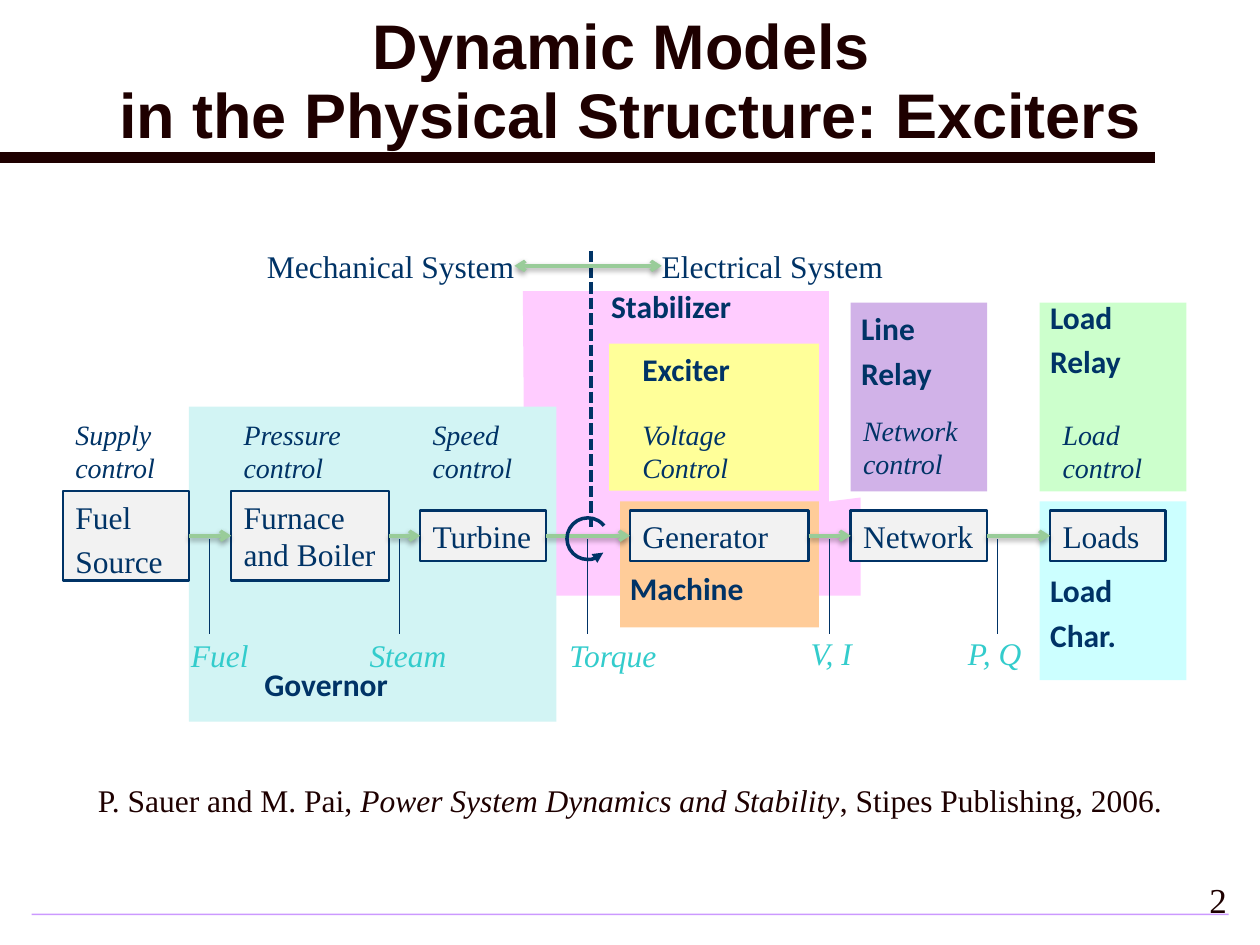
from dataclasses import dataclass
from lxml.etree import SubElement
from pptx import Presentation
from pptx.dml.color import RGBColor
from pptx.enum.dml import MSO_LINE
from pptx.enum.shapes import MSO_CONNECTOR, MSO_SHAPE
from pptx.enum.text import MSO_ANCHOR, PP_ALIGN
from pptx.oxml.ns import qn
from pptx.util import Cm, Pt


@dataclass(frozen=True)
class Theme:
    ink: str = "1E0000"
    navy: str = "003366"
    teal: str = "33CCCC"
    green: str = "99CC99"
    lilac: str = "CC99FF"
    box: str = "F2F2F2"
    serif: str = "Times New Roman"
    title: int = 36
    number: int = 20
    body: int = 18
    small: int = 16

    def font(self, name=None, size=None, bold=False, italic=False):
        return {"name": name or self.serif, "size": Pt(size or self.body),
                "bold": bold, "italic": italic}


class Painter:
    """Holds the theme and the slide being drawn."""

    def __init__(self, slide, theme):
        self.s, self.t = slide, theme

    def label(self, sp, lines, font, color, align=PP_ALIGN.LEFT, inset=0.25):
        """Each line is a string or a list of (text, italic) runs."""
        tf = sp.text_frame
        frame = {"word_wrap": True, "vertical_anchor": MSO_ANCHOR.TOP,
                 "margin_left": Cm(inset), "margin_right": Cm(inset),
                 "margin_top": Cm(0.13), "margin_bottom": Cm(0.13)}
        for key, value in frame.items():
            setattr(tf, key, value)
        for i, line in enumerate(lines):
            p = tf.add_paragraph() if i else tf.paragraphs[0]
            p.alignment = align
            p.space_before = Pt(4 if i else 0)
            runs = [(line, font["italic"])] if isinstance(line, str) else line
            for text, italic in runs:
                r = p.add_run()
                r.text = text
                for key, value in {**font, "italic": italic}.items():
                    setattr(r.font, key, value)
                r.font.color.rgb = RGBColor.from_string(color)

    def text(self, x, y, w, h, lines, font, color, **options):
        sp = self.s.shapes.add_textbox(Cm(x), Cm(y), Cm(w), Cm(h))
        self.label(sp, lines, font, color, **options)
        return sp

    def outline(self, sp, color, width):
        sp.line.color.rgb = RGBColor.from_string(color)
        sp.line.width = Pt(width)

    def fill(self, sp, color):
        sp.shadow.inherit = False
        sp.fill.solid()
        sp.fill.fore_color.rgb = RGBColor.from_string(color)
        sp.line.fill.background()
        return sp

    def rect(self, x, y, w, h, color):
        sp = self.s.shapes.add_shape(MSO_SHAPE.RECTANGLE, Cm(x), Cm(y), Cm(w), Cm(h))
        return self.fill(sp, color)

    def polygon(self, points, color):
        start, *rest = [(Cm(x), Cm(y)) for x, y in points]
        fb = self.s.shapes.build_freeform(*start)
        fb.add_line_segments(rest, close=True)
        return self.fill(fb.convert_to_shape(), color)

    def line(self, x1, y1, x2, y2, color, width):
        sp = self.s.shapes.add_connector(MSO_CONNECTOR.STRAIGHT, Cm(x1), Cm(y1), Cm(x2), Cm(y2))
        self.outline(sp, color, width)
        SubElement(sp._element.spPr, qn("a:effectLst"))
        return sp

    def arrow(self, left, right, ends=("tailEnd",)):
        """Join the right side of one box to the left side of the next."""
        sp = self.line(0, 0, 1, 1, self.t.green, 2)
        sp.begin_connect(left, 3)
        sp.end_connect(right, 1)
        for end in ends:
            SubElement(sp.line._get_or_add_ln(), qn(f"a:{end}"), type="arrow")
        effects = sp._element.spPr.find(qn("a:effectLst"))
        shadow = SubElement(effects, qn("a:outerShdw"), blurRad="40000", dist="20000",
                            dir="5400000", rotWithShape="0")
        shade = SubElement(shadow, qn("a:srgbClr"), val="000000")
        SubElement(shade, qn("a:alpha"), val="38000")

    def arc(self, x, y, size, start, end):
        sp = self.s.shapes.add_shape(MSO_SHAPE.ARC, Cm(x), Cm(y), Cm(size), Cm(size))
        sp.shadow.inherit = False
        sp.fill.background()
        sp.adjustments[0], sp.adjustments[1] = start, end
        self.outline(sp, self.t.navy, 2)
        SubElement(sp.line._get_or_add_ln(), qn("a:headEnd"), type="triangle")

    def title(self, x, y, w, h, text):
        sp = self.s.shapes.title
        sp.left, sp.top, sp.width, sp.height = Cm(x), Cm(y), Cm(w), Cm(h)
        tf = sp.text_frame
        tf.text = text
        tf.word_wrap = True
        tf.vertical_anchor = MSO_ANCHOR.MIDDLE
        p = tf.paragraphs[0]
        p.alignment, p.line_spacing = PP_ALIGN.CENTER, 0.9
        for r in p.runs:
            for key, value in self.t.font("Arial", self.t.title, bold=True).items():
                setattr(r.font, key, value)
            r.font.color.rgb = RGBColor.from_string(self.t.ink)


AXIS = 10.8  # height of the energy flow

REGIONS = [  # left, top, width, height, colour
    (12.5, 10.11, 4.01, 2.54, "FFCC99"),
    (17.15, 6.1, 2.75, 3.81, "D1B2E8"),
    (20.96, 6.1, 2.96, 3.81, "CCFFCC"),
    (20.96, 10.11, 2.96, 3.6, "CCFFFF"),
    (3.81, 8.2, 7.41, 6.35, "D2F4F4"),
    (12.28, 6.93, 4.23, 2.96, "FFFF99"),
]
MODELS = [  # left, top, lines
    (12.7, 11.35, ["Machine"]),
    (5.33, 13.28, ["Governor"]),
    (12.95, 6.93, ["Exciter"]),
    (21.17, 11.38, ["Load", "Char."]),
    (21.17, 5.87, ["Load", "Relay"]),
    (17.36, 6.1, ["Line", "Relay"]),
    (12.32, 5.66, ["Stabilizer"]),
]
STAGES = [  # left, width, height, lines, control, top of control
    (1.27, 2.54, 1.8, ["Fuel", "Source"], "Supply control", 8.28),
    (4.66, 3.18, 1.8, ["Furnace and Boiler"], "Pressure control", 8.28),
    (8.47, 2.54, 1.02, ["Turbine"], "Speed control", 8.28),
    (12.7, 3.6, 1.02, ["Generator"], "Voltage Control", 8.28),
    (17.15, 2.75, 1.02, ["Network"], "Network control", 8.2),
    (21.17, 2.33, 1.02, ["Loads"], "Load control", 8.28),
]
FLOWS = [  # x of lead line, left and top of label, label
    (4.23, 3.6, 12.7, "Fuel"),
    (8.05, 7.2, 12.7, "Steam"),
    (11.85, 11.23, 12.7, "Torque"),
    (16.72, 16.09, 12.66, "V, I"),
    (20.11, 19.26, 12.66, "P, Q"),
]


def main():
    prs = Presentation()
    prs.slide_width, prs.slide_height = Cm(25.4), Cm(19.05)
    t = Theme()
    d = Painter(prs.slides.add_slide(prs.slide_layouts[5]), t)

    # Title and page rules
    d.rect(0.64, 18.42, 24.13, 0.03, t.lilac)
    d.line(0, 3.18, 23.28, 3.18, t.ink, 6)
    d.title(0.64, 0.2, 24.13, 2.97, "Dynamic Models \vin the Physical Structure: Exciters")

    # Model regions and their names
    d.polygon([(17.35, 12.01), (17.35, 10.03), (16.71, 10.11), (16.71, 5.87),
               (10.54, 5.87), (10.59, 12.01)], "FFCCFF")
    for region in REGIONS:
        d.rect(*region)
    for x, y, lines in MODELS:
        d.text(x, y, 3.2, 1.3, lines, t.font("Calibri", bold=True), t.navy, inset=0)

    # Stages with the control above each
    boxes = []
    for x, w, h, lines, control, top in STAGES:
        sp = d.rect(x, AXIS - h / 2, w, h, t.box)
        d.outline(sp, t.navy, 1.5)
        d.label(sp, lines, t.font(), t.navy)
        d.text(x, top, w, 1.63, [control], t.font(size=t.small, italic=True), t.navy)
        boxes.append(sp)

    # Divide between the two systems
    d.line(11.91, 5.05, 11.91, 10.62, t.navy, 2.25).line.dash_style = MSO_LINE.SQUARE_DOT
    mechanical = d.text(5.08, 4.85, 5.29, 1.02, ["Mechanical System"], t.font(), t.navy,
                        align=PP_ALIGN.RIGHT, inset=0)
    electrical = d.text(13.34, 4.85, 4.88, 1.02, ["Electrical System"], t.font(), t.navy, inset=0)
    d.arrow(mechanical, electrical, ("headEnd", "tailEnd"))

    # Flow between stages
    for left, right in zip(boxes, boxes[1:]):
        d.arrow(left, right)
    for lead, x, y, name in FLOWS:
        d.line(lead, 12.78, lead, 10.87, t.navy, 0.75)
        d.text(x, y, 2.34, 1.02, [name], t.font(italic=True), t.teal)
    d.arc(11.43, 10.44, 0.84, 25.21, 192.86)

    # Reference and slide number
    d.text(1.17, 15.62, 23.06, 1.07,
           [[("P. Sauer and M. Pai, ", False), ("Power System Dynamics and Stability", True),
             (", Stipes Publishing, 2006.", False)]], t.font(), t.ink, align=PP_ALIGN.CENTER)
    d.text(23.5, 17.58, 1.48, 1.27, ["2"], t.font(size=t.number), t.ink, align=PP_ALIGN.RIGHT)

    prs.save("out.pptx")


if __name__ == "__main__":
    main()
